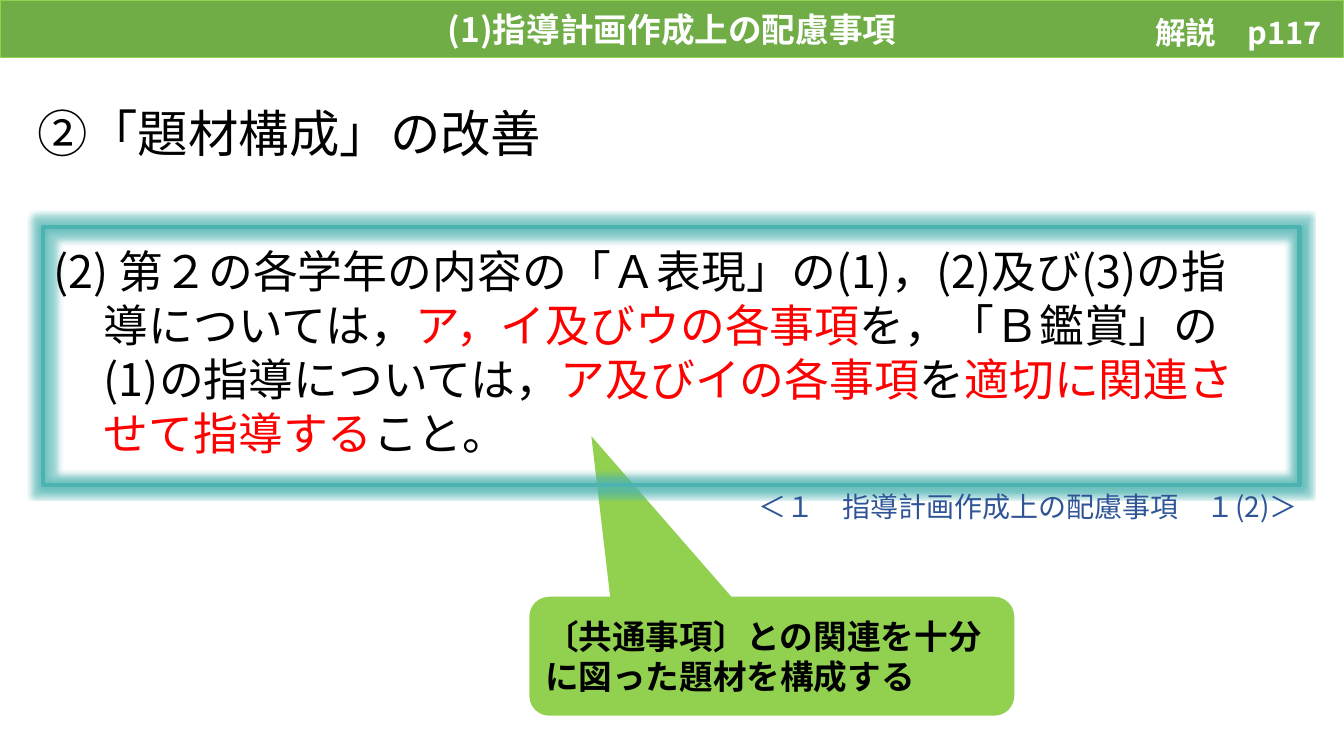
from lxml.etree import SubElement
from pptx import Presentation
from pptx.dml.color import RGBColor
from pptx.enum.shapes import MSO_SHAPE
from pptx.enum.text import MSO_ANCHOR, MSO_AUTO_SIZE, PP_ALIGN
from pptx.oxml.ns import qn
from pptx.util import Inches, Pt

FONT = "Noto Sans CJK JP"
BLACK, WHITE, RED, TEAL = "000000", "FFFFFF", "FF0000", "4DB3B1"

TITLE = [("(1)指導計画作成上の配慮事項", WHITE)]
RULE = [
    (" 第２の各学年の内容の「Ａ表現」の(1)，(2)及び(3)の指導については，", BLACK),
    ("ア，イ及びウの各事項", RED),
    ("を，「Ｂ鑑賞」の(1)の指導については，", BLACK),
    ("ア及びイの各事項", RED),
    ("を", BLACK),
    ("適切に関連させて指導する", RED),
    ("こと。", BLACK),
]
NOTE = [("〔共通事項〕との関連を十分に図った題材を構成する", BLACK)]
LABELS = [  # box, text and colour, size, bold
    ((0.27, 0.96, 5.32, 0.71), [("②「題材構成」の改善", BLACK)], 36, False),
    ((11.36, 0.09, 2.02, 0.47), [("解説　p117", WHITE)], 22, True),
    ((7.42, 4.81, 6.89, 0.44),
     [("＜１　指導計画作成上の配慮事項　１(2)＞", "2F5597")], 20, False),
]


def rgb(code):
    return RGBColor.from_string(code)


def place(shape, box):
    for name, size in zip(("left", "top", "width", "height"), box):
        setattr(shape, name, Inches(size))


def write(shape, runs, size, bold=False, align=PP_ALIGN.LEFT, anchor=MSO_ANCHOR.TOP):
    frame = shape.text_frame
    form = {"word_wrap": True, "auto_size": MSO_AUTO_SIZE.NONE, "vertical_anchor": anchor}
    for name, value in form.items():
        setattr(frame, name, value)
    para = frame.paragraphs[0]
    para.alignment = align
    para.space_before = Pt(0)
    for text, color in runs:
        run = para.add_run()
        run.text = text
        for name, value in {"name": FONT, "size": Pt(size), "bold": bold}.items():
            setattr(run.font, name, value)
        run.font.color.rgb = rgb(color)
        SubElement(run.font._element, qn("a:ea"), typeface=FONT)
    return para


def number(para, start):
    """Number a paragraph as (n) with a hanging indent."""
    props = para._p.get_or_add_pPr()
    props.set("marL", str(Inches(0.5)))
    props.set("indent", str(-Inches(0.5)))
    SubElement(props, qn("a:buFont"), typeface=FONT)
    SubElement(props, qn("a:buAutoNum"), type="arabicParenBoth", startAt=str(start))


def glow(shape, color, radius, alpha):
    props = shape._element.spPr
    for old in props.findall(qn("a:effectLst")):
        props.remove(old)
    halo = SubElement(SubElement(props, qn("a:effectLst")), qn("a:glow"), rad=str(Pt(radius)))
    tint = SubElement(halo, qn("a:srgbClr"), val=color)
    SubElement(tint, qn("a:alpha"), val=str(alpha * 1000))


deck = Presentation()
deck.slide_width, deck.slide_height = Inches(13.33), Inches(7.5)
slide = deck.slides.add_slide(deck.slide_layouts[1])
shapes = slide.shapes

title, body = slide.placeholders
place(title, (0, 0, 13.33, 0.57))
title.fill.solid()
title.fill.fore_color.rgb = rgb("70AD47")
title.line.color.rgb = rgb("92D050")
title.line.width = Pt(1)
write(title, TITLE, 24, True, PP_ALIGN.CENTER, MSO_ANCHOR.MIDDLE)

place(body, (0.43, 2.37, 12.07, 2.26))
number(write(body, RULE, 32), 2)

note = shapes.add_shape(MSO_SHAPE.ROUNDED_RECTANGULAR_CALLOUT,
                        *map(Inches, (5.25, 5.92, 4.81, 1.18)))
for i, value in enumerate((-0.372, -1.85, 0.167)):
    note.adjustments[i] = value
note.shadow.inherit = False
note.fill.solid()
note.fill.fore_color.rgb = rgb("92D050")
note.line.fill.background()
write(note, NOTE, 24, True, anchor=MSO_ANCHOR.MIDDLE)

border = shapes.add_shape(MSO_SHAPE.RECTANGLE, *map(Inches, (0.43, 2.25, 12.46, 2.56)))
border.fill.background()
border.line.color.rgb = rgb(TEAL)
border.line.width = Pt(3)
glow(border, TEAL, 5, 60)

# Text stays in front of the glowing border.
shapes._spTree.append(body._element)
for box, runs, size, bold in LABELS:
    label = shapes.add_textbox(*map(Inches, box))
    write(label, runs, size, bold)

deck.save("out.pptx")
